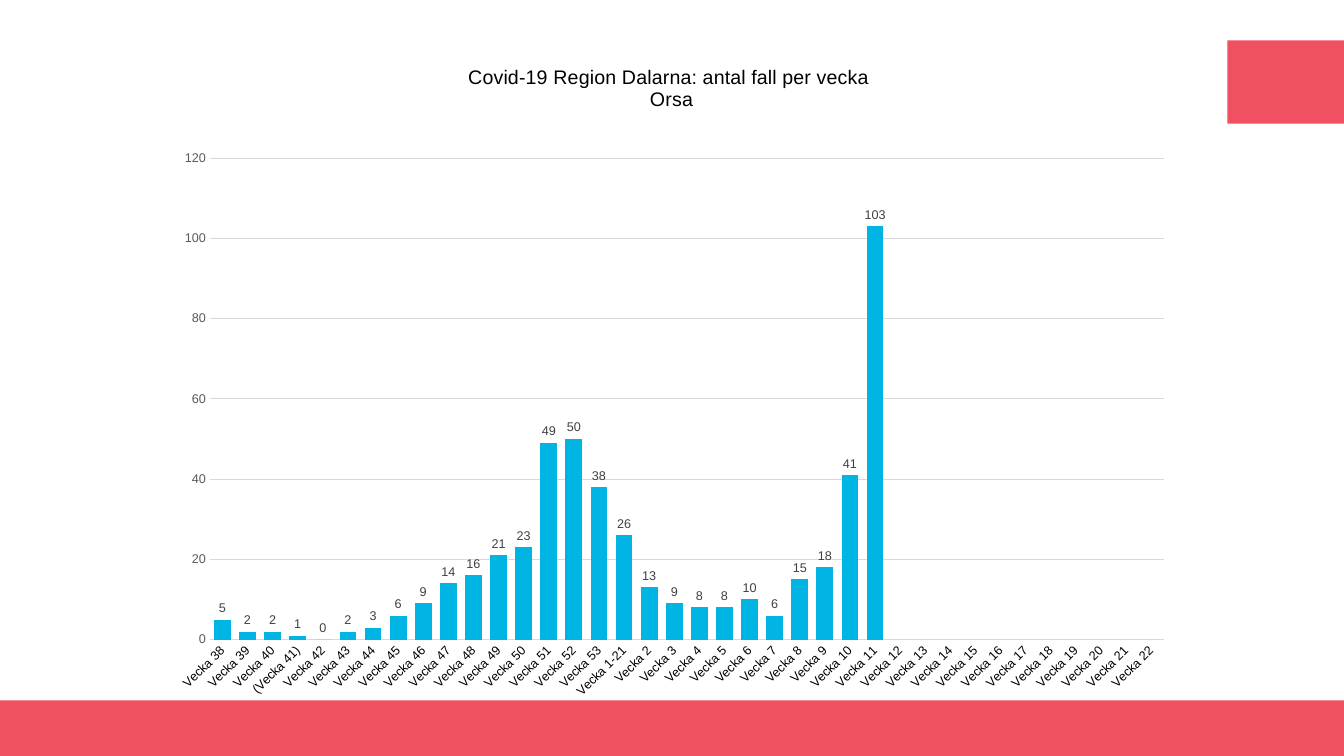
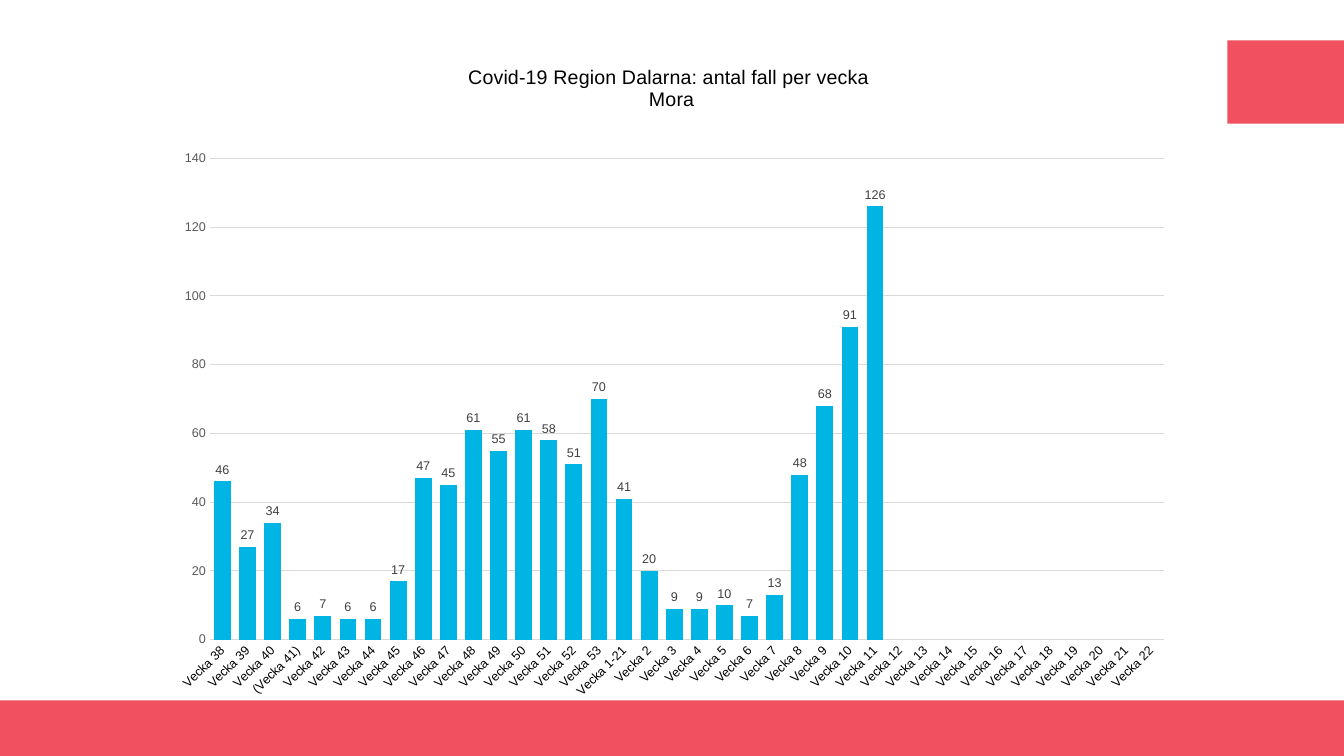
from dataclasses import dataclass

from lxml.etree import SubElement
from pptx import Presentation
from pptx.chart.axis import CategoryAxis, ValueAxis
from pptx.chart.chart import Chart
from pptx.chart.data import CategoryChartData
from pptx.dml.color import RGBColor
from pptx.enum.chart import XL_CHART_TYPE, XL_LABEL_POSITION, XL_TICK_MARK
from pptx.enum.shapes import MSO_SHAPE
from pptx.oxml import parse_xml
from pptx.oxml.ns import qn, nsdecls
from pptx.slide import Slide
from pptx.text.text import Font, TextFrame
from pptx.util import Cm, Pt


@dataclass(frozen=True)
class Area:
    left: float
    top: float
    width: float
    height: float

    def lengths(self) -> tuple[Cm, Cm, Cm, Cm]:
        return Cm(self.left), Cm(self.top), Cm(self.width), Cm(self.height)


@dataclass(frozen=True)
class Municipality:
    name: str
    cases: tuple[int, ...]
    axis_maximum: int


# Shared look
FONT = "Arial"
CORAL, CYAN, GRID = "F15060", "00B4E4", "D9D9D9"
BLACK, AXIS_GREY, LABEL_GREY = "000000", "595959", "404040"
PAGE_WIDTH, PAGE_HEIGHT = 33.87, 19.05
BANDS = (
    Area(0, 17.65, PAGE_WIDTH, 1.4),
    Area(30.93, 1.02, PAGE_WIDTH - 30.93, 2.1),
)
CHART_AREA = Area(4.01, 1.09, 25.83, 16.87)
PLOT_AREA = Area(5.29, 3.99, 24.04, 12.13)
TITLE = "Covid-19 Region Dalarna: antal fall per vecka "

# Data
WEEKS = [
    *("(Vecka 41)" if week == 41 else f"Vecka {week}" for week in range(38, 54)),
    "Vecka 1-21",
    *(f"Vecka {week}" for week in range(2, 23)),
]
MUNICIPALITIES = (
    Municipality("Orsa", (5, 2, 2, 1, 0, 2, 3, 6, 9, 14, 16, 21, 23, 49, 50, 38,
                          26, 13, 9, 8, 8, 10, 6, 15, 18, 41, 103), 120),
    Municipality("Mora", (46, 27, 34, 6, 7, 6, 6, 17, 47, 45, 61, 55, 61, 58, 51, 70,
                          41, 20, 9, 9, 10, 7, 13, 48, 68, 91, 126), 140),
)


def color(value: str) -> RGBColor:
    return RGBColor.from_string(value)


def style_font(font: Font, *, size: float, fill: str) -> None:
    font.name, font.size, font.bold = FONT, Pt(size), False
    font.color.rgb = color(fill)


def write_text(frame: TextFrame, *lines: str, size: float, fill: str) -> None:
    for index, line in enumerate(lines):
        para = frame.add_paragraph() if index else frame.paragraphs[0]
        span = para.add_run()
        span.text = line
        style_font(span.font, size=size, fill=fill)


def draw_band(page: Slide, area: Area) -> None:
    band = page.shapes.add_shape(MSO_SHAPE.RECTANGLE, *area.lengths())
    band.shadow.inherit = False
    band.fill.solid()
    band.fill.fore_color.rgb = color(CORAL)
    band.line.fill.background()


def place_plot(chart: Chart) -> None:
    """Fix the inner plot area as fractions of the chart area."""
    plot_area = chart.element.xpath("c:chart/c:plotArea")[0]
    for layout in plot_area.findall(qn("c:layout")):
        plot_area.remove(layout)
    layout = parse_xml(f"<c:layout {nsdecls('c')}><c:manualLayout/></c:layout>")
    fractions = {
        "x": (PLOT_AREA.left - CHART_AREA.left) / CHART_AREA.width,
        "y": (PLOT_AREA.top - CHART_AREA.top) / CHART_AREA.height,
        "w": PLOT_AREA.width / CHART_AREA.width,
        "h": PLOT_AREA.height / CHART_AREA.height,
    }
    settings = {"layoutTarget": "inner", "xMode": "edge", "yMode": "edge"}
    for tag, value in (settings | fractions).items():
        SubElement(layout[0], qn(f"c:{tag}")).set("val", str(value))
    plot_area.insert(0, layout)


def clear_background(chart: Chart) -> None:
    chart.element.find(qn("c:chart")).addnext(parse_xml(
        f"<c:spPr {nsdecls('c', 'a')}><a:noFill/><a:ln><a:noFill/></a:ln></c:spPr>"))


def style_axis(axis: CategoryAxis | ValueAxis, *, fill: str) -> None:
    axis.major_tick_mark = axis.minor_tick_mark = XL_TICK_MARK.NONE
    style_font(axis.tick_labels.font, size=9, fill=fill)


def style_axes(chart: Chart, maximum: int) -> None:
    weeks, counts = chart.category_axis, chart.value_axis
    style_axis(weeks, fill=BLACK)
    style_axis(counts, fill=AXIS_GREY)
    chart.element.xpath(".//c:catAx/c:txPr/a:bodyPr")[0].set("rot", "-2700000")
    counts.minimum_scale, counts.maximum_scale, counts.major_unit = 0, maximum, 20
    counts.has_major_gridlines = True
    for line in (weeks.format.line, counts.major_gridlines.format.line):
        line.color.rgb = color(GRID)
        line.width = Pt(0.75)
    counts.format.line.fill.background()


def style_columns(chart: Chart) -> None:
    plot = chart.plots[0]
    plot.gap_width, plot.overlap = 50, -27
    plot.vary_by_categories = False
    columns = plot.series[0]
    columns.format.fill.solid()
    columns.format.fill.fore_color.rgb = color(CYAN)
    labels = columns.data_labels
    labels.show_value = True
    labels.position = XL_LABEL_POSITION.OUTSIDE_END
    style_font(labels.font, size=9, fill=LABEL_GREY)


def draw_chart(page: Slide, municipality: Municipality) -> None:
    data = CategoryChartData()
    data.categories = WEEKS
    missing = [None] * (len(WEEKS) - len(municipality.cases))
    data.add_series("Series 1", [*municipality.cases, *missing])
    chart = page.shapes.add_chart(
        XL_CHART_TYPE.COLUMN_CLUSTERED, *CHART_AREA.lengths(), data).chart
    style_font(chart.font, size=10, fill=BLACK)
    chart.has_legend = False
    chart.has_title = True
    write_text(chart.chart_title.text_frame, TITLE, municipality.name,
               size=14, fill=BLACK)
    style_axes(chart, municipality.axis_maximum)
    style_columns(chart)
    place_plot(chart)
    clear_background(chart)


def main() -> None:
    deck = Presentation()
    deck.slide_width, deck.slide_height = Cm(PAGE_WIDTH), Cm(PAGE_HEIGHT)
    for municipality in MUNICIPALITIES:
        page = deck.slides.add_slide(deck.slide_layouts[6])
        for area in BANDS:
            draw_band(page, area)
        draw_chart(page, municipality)
    deck.save("out.pptx")


if __name__ == "__main__":
    main()
